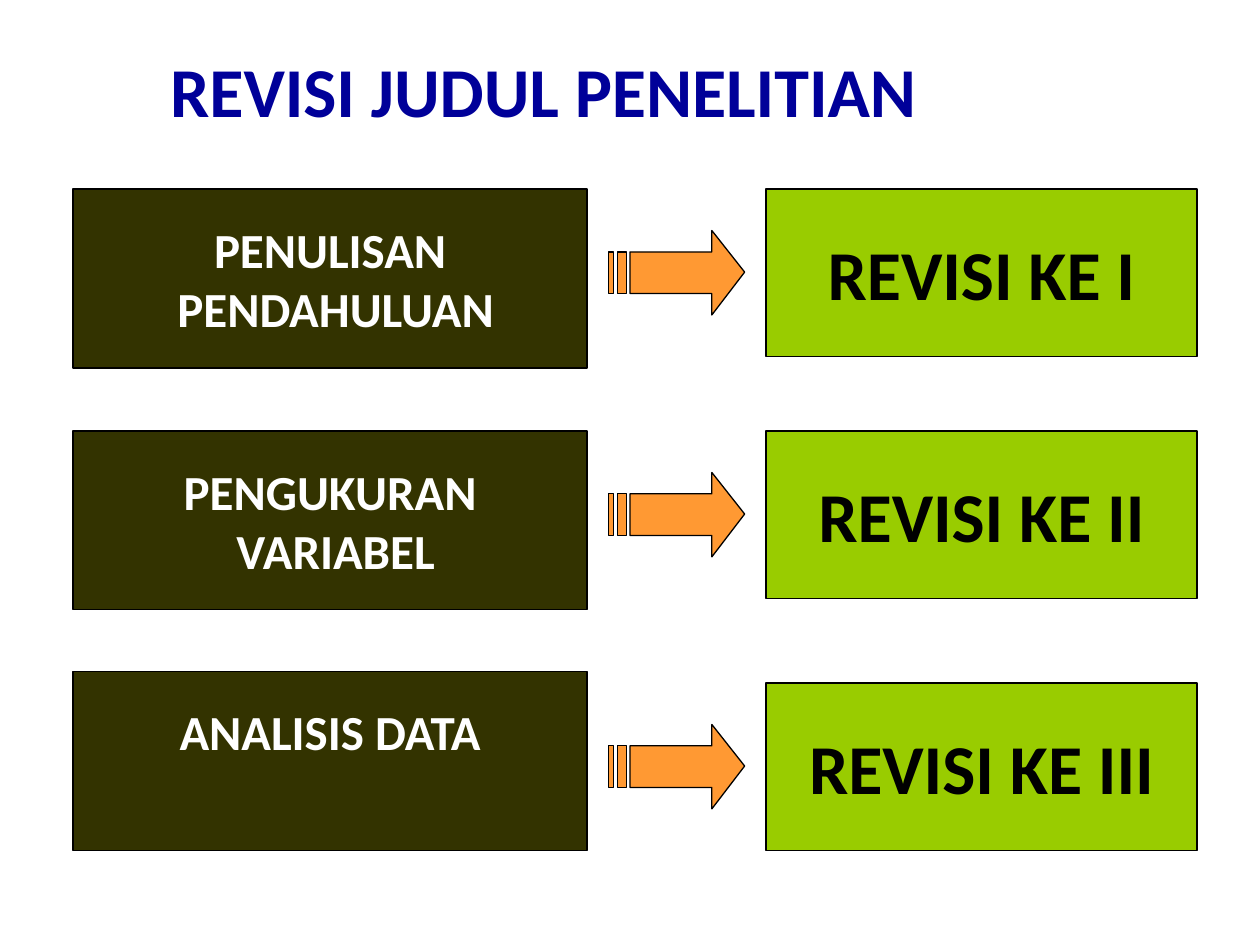
"""Build the slide on revising a research title in three stages."""
from dataclasses import dataclass

from pptx import Presentation
from pptx.dml.color import RGBColor as RGB
from pptx.enum.shapes import MSO_SHAPE as SHAPE
from pptx.enum.text import MSO_ANCHOR as ANCHOR, MSO_AUTO_SIZE as AUTO, PP_ALIGN as ALIGN
from pptx.util import Inches, Pt


@dataclass(frozen=True)
class Theme:
    font: str = "Calibri"
    title: RGB = RGB(0x00, 0x00, 0x99)
    stage: RGB = RGB(0x33, 0x33, 0x00)
    revision: RGB = RGB(0x99, 0xCC, 0x00)
    arrow: RGB = RGB(0xFF, 0x99, 0x33)
    black: RGB = RGB(0, 0, 0)
    white: RGB = RGB(0xFF, 0xFF, 0xFF)
    large: Pt = Pt(40)
    medium: Pt = Pt(28)
    line: Pt = Pt(0.75)


T = Theme()


def write(tf, text, size, color, align):
    tf.text = text
    for p in tf.paragraphs:
        p.alignment = align
        for r in p.runs:
            r.font.name, r.font.size, r.font.bold = T.font, size, True
            r.font.color.rgb = color


def paint(sp, fill):
    sp.shadow.inherit = False
    sp.fill.solid()
    sp.fill.fore_color.rgb = fill
    sp.line.color.rgb = T.black
    sp.line.width = T.line


prs = Presentation()
prs.slide_width, prs.slide_height = Inches(10), Inches(7.5)
s = prs.slides.add_slide(prs.slide_layouts[5])

title = s.shapes.title
title.left, title.top, title.width, title.height = map(Inches, (1.25, 0.33, 7.48, 0.77))
tf = title.text_frame
tf.auto_size = AUTO.NONE
tf.vertical_anchor = ANCHOR.TOP
write(tf, "REVISI JUDUL PENELITIAN", T.large, T.title, ALIGN.LEFT)

rows = [
    ("PENULISAN\n PENDAHULUAN", 1.5, "REVISI KE I", 1.5),
    ("PENGUKURAN\n VARIABEL", 3.42, "REVISI KE II", 3.42),
    ("ANALISIS DATA", 5.33, "REVISI KE III", 5.42),
]
arrow_parts = [
    [(0.82, 0), (0.82, 0.17), (0.17, 0.17), (0.17, 0.5), (0.82, 0.5), (0.82, 0.67), (1.08, 0.33)],
    [(0.07, 0.17), (0.07, 0.5), (0.14, 0.5), (0.14, 0.17)],
    [(0, 0.17), (0, 0.5), (0.04, 0.5), (0.04, 0.17)],
]

for stage, stage_top, revision, revision_top in rows:
    boxes = [
        (stage, 0.58, stage_top, 4.08, 1.42, T.stage, T.medium, T.white),
        (revision, 6.08, revision_top, 3.42, 1.33, T.revision, T.large, T.black),
    ]
    for text, x, y, w, h, fill, size, color in boxes:
        sp = s.shapes.add_shape(SHAPE.RECTANGLE, *map(Inches, (x, y, w, h)))
        paint(sp, fill)
        tf = sp.text_frame
        tf.word_wrap = False
        tf.vertical_anchor = ANCHOR.MIDDLE
        if text == "ANALISIS DATA":
            tf.margin_bottom = Inches(0.52)
        write(tf, text, size, color, ALIGN.CENTER)

    outlines = [
        [(Inches(4.83 + x), Inches(revision_top + 0.33 + y)) for x, y in part]
        for part in arrow_parts
    ]
    builder = s.shapes.build_freeform(*outlines[0][0])
    builder.add_line_segments(outlines[0][1:], close=True)
    for outline in outlines[1:]:
        builder.move_to(*outline[0])
        builder.add_line_segments(outline[1:], close=True)
    paint(builder.convert_to_shape(), T.arrow)

prs.save("out.pptx")
